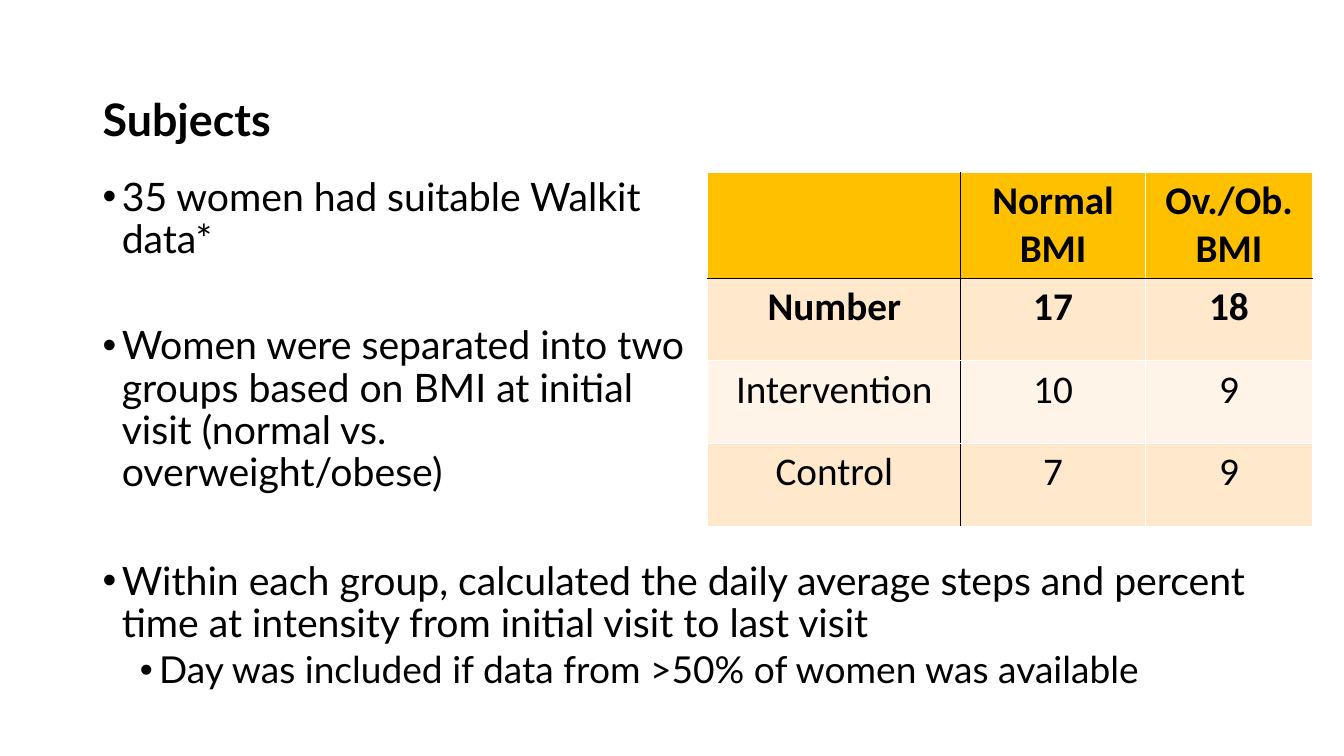
from typing import NamedTuple

from lxml.etree import SubElement
from pptx import Presentation
from pptx.dml.color import RGBColor
from pptx.enum.text import MSO_ANCHOR, PP_ALIGN
from pptx.oxml.ns import qn
from pptx.util import Inches, Pt

WIDE, HIGH = Inches(13.33), Inches(7.5)
HUES = {"ink": "000000", "white": "FFFFFF", "gold": "FFC000",
        "peach": "FFE8CC", "cream": "FFF4E7"}


class Line(NamedTuple):
    text: str
    size: float = 28
    gap: float = 0
    left: float = 0.19
    dot: bool = True
    bold: bool = False


class Box(NamedTuple):
    # Left, top, width and height are percentages of the slide
    left: float
    top: float
    width: float
    height: float
    lines: list[Line]
    anchor: MSO_ANCHOR = MSO_ANCHOR.TOP


def across(share: float) -> int:
    return round(WIDE * share / 100)


def down(share: float) -> int:
    return round(HIGH * share / 100)


def color(name: str) -> RGBColor:
    return RGBColor.from_string(HUES[name])


def style(para, face: str, size: float, bold: bool) -> None:
    font = para.font
    font.name, font.size, font.bold = face, Pt(size), bold
    font.color.rgb = color("ink")


def draw_box(slide, box: Box) -> None:
    shape = slide.shapes.add_textbox(across(box.left), down(box.top),
                                     across(box.width), down(box.height))
    frame = shape.text_frame
    frame.word_wrap = True
    frame.vertical_anchor = box.anchor
    for i, line in enumerate(box.lines):
        para = frame.paragraphs[0] if i == 0 else frame.add_paragraph()
        para.text = line.text
        para.line_spacing = 0.9
        para.space_before = Pt(line.gap)
        if line.dot:
            props = para._p.get_or_add_pPr()
            props.set("marL", str(Inches(line.left)))
            props.set("indent", str(Inches(-0.19)))
            SubElement(props, qn("a:buFont"), typeface="Arial")
            SubElement(props, qn("a:buChar"), char="•")
        style(para, "Lato", line.size, line.bold)


def edge(cell, side: str, name: str) -> None:
    rule = SubElement(cell._tc.get_or_add_tcPr(), qn(f"a:ln{side}"), w=str(Pt(1)))
    fill = SubElement(rule, qn("a:solidFill"))
    SubElement(fill, qn("a:srgbClr"), val=HUES[name])


def draw_table(slide) -> None:
    frame = slide.shapes.add_table(len(CELLS), len(COLS), across(52.66), down(22.8),
                                   across(sum(COLS)), down(46.53))
    table = frame.table
    for col, width in zip(table.columns, COLS):
        col.width = across(width)
    for r, (row, texts) in enumerate(zip(table.rows, CELLS)):
        row.height = down(10.93)
        for c, text in enumerate(texts):
            cell = table.cell(r, c)
            # Black rules part the labels and the header from the counts
            dark = {"L": c == 1, "R": c == 0, "T": r == 1, "B": r == 0}
            for side, black in dark.items():
                edge(cell, side, "ink" if black else "white")
            cell.fill.solid()
            cell.fill.fore_color.rgb = color(BANDS[r])
            para = cell.text_frame.paragraphs[0]
            para.text = text
            para.alignment = PP_ALIGN.CENTER
            style(para, "Calibri", 28, r < 2)
    frame.height = down(46.53)


# Table content
COLS = [18.83, 13.73, 12.45]
BANDS = ["gold", "peach", "cream", "peach"]
CELLS = [
    ["", "Normal BMI", "Ov./Ob. BMI"],
    ["Number", "17", "18"],
    ["Intervention", "10", "9"],
    ["Control", "7", "9"],
]

# Title and bullets
BOXES = [
    Box(6.9, 22.8, 44.79, 46.53, [
        Line("35 women had suitable Walkit data*"),
        Line("Women were separated into two groups based on BMI at initial "
             "visit (normal vs. overweight/obese)", gap=45.7),
    ]),
    Box(6.9, 0.67, 78.77, 19.33,
        [Line("Subjects", 32, dot=False, bold=True)], MSO_ANCHOR.BOTTOM),
    Box(6.9, 73.6, 90.77, 20.8, [
        Line("Within each group, calculated the daily average steps and percent "
             "time at intensity from initial visit to last visit"),
        Line("Day was included if data from >50% of women was available",
             26.5, 3.8, 0.56),
    ]),
]


def main() -> None:
    deck = Presentation()
    deck.slide_width, deck.slide_height = WIDE, HIGH
    slide = deck.slides.add_slide(deck.slide_layouts[6])
    draw_table(slide)
    for box in BOXES:
        draw_box(slide, box)
    deck.save("out.pptx")


if __name__ == "__main__":
    main()
